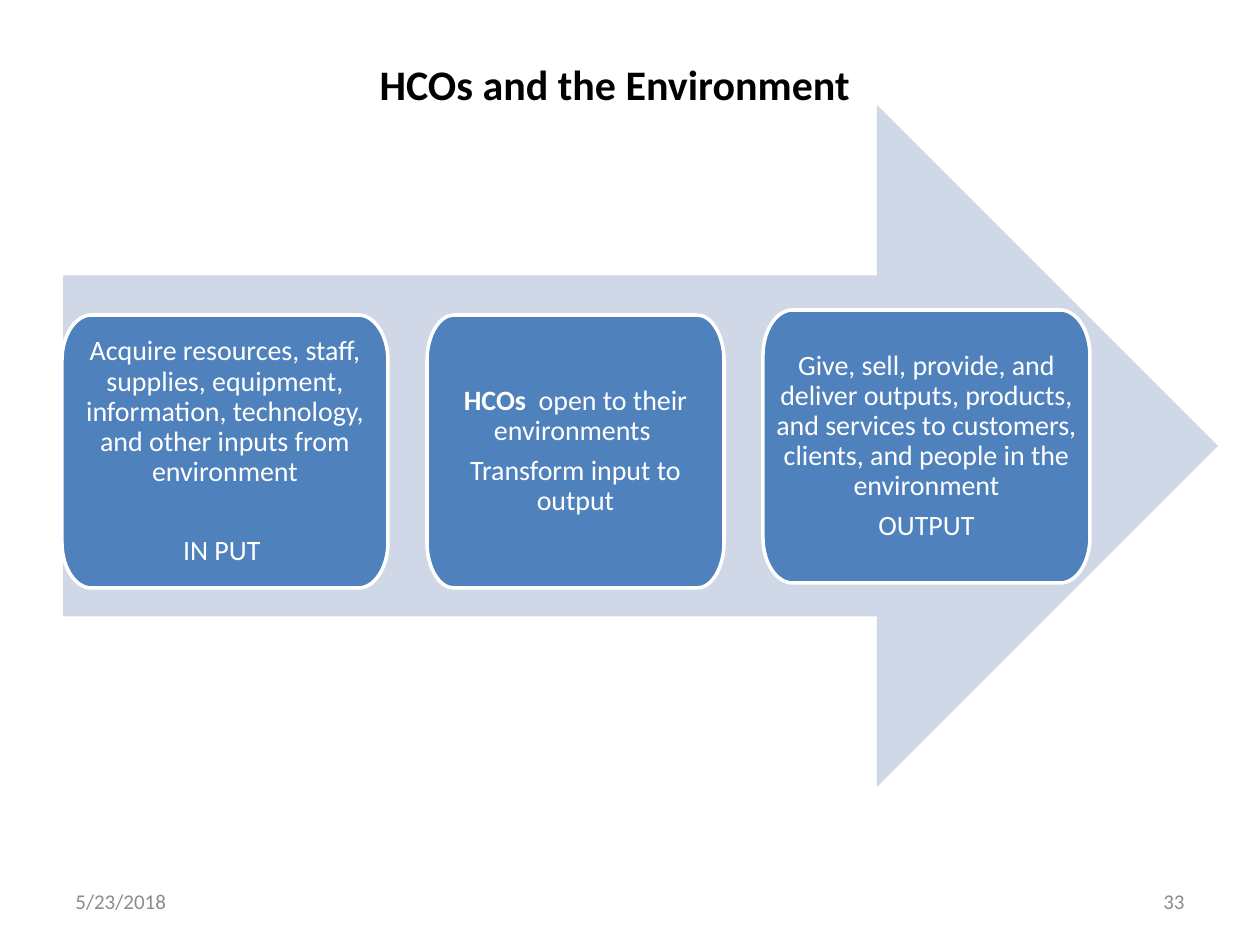
from dataclasses import dataclass

from lxml import etree
from pptx import Presentation
from pptx.dml.color import RGBColor as RGB
from pptx.enum.shapes import MSO_SHAPE as SHAPE
from pptx.enum.text import MSO_ANCHOR as ANCHOR, MSO_AUTO_SIZE as FIT, PP_ALIGN as ALIGN
from pptx.oxml.ns import qn
from pptx.util import Pt

PX = 914400 // 126


@dataclass(frozen=True)
class Theme:
    font: str = "Calibri"
    ink: RGB = RGB(0, 0, 0)
    muted: RGB = RGB(0x8C, 0x8C, 0x8C)
    arrow: RGB = RGB(0xD0, 0xD8, 0xE8)
    block: RGB = RGB(0x4F, 0x81, 0xBD)
    white: RGB = RGB(255, 255, 255)
    title_size: int = 24
    block_size: int = 16
    footer_size: int = 12


theme = Theme()


def style(r, size, color, bold=False):
    r.font.name = theme.font
    r.font.size = Pt(size)
    r.font.color.rgb = color
    r.font.bold = bold


def add_block(shapes, x, y, w, h):
    rx, ry = w / 11, h / 6
    right, bottom = x + w, y + h
    points = [
        (x, y + ry), (x, y), (x + rx, y),
        (right - rx, y), (right, y), (right, y + ry),
        (right, bottom - ry), (right, bottom), (right - rx, bottom),
        (x + rx, bottom), (x, bottom), (x, bottom - ry),
    ]
    points = [(px * PX, py * PX) for px, py in points]
    outline = shapes.build_freeform(*points[0])
    outline.add_line_segments(points[1:], close=True)
    sp = outline.convert_to_shape()
    steps = list(next(sp._element.iter(qn("a:path"))))
    for i in range(0, 12, 3):
        start, corner, end = [
            [int(step[0].get(axis)) for axis in "xy"] for step in steps[i:i + 3]
        ]
        curve = etree.Element(qn("a:cubicBezTo"))
        for near, pull in [(start, 0.55), (end, 0.55), (end, 0)]:
            px, py = [round(n + (c - n) * pull) for n, c in zip(near, corner)]
            etree.SubElement(curve, qn("a:pt"), x=str(px), y=str(py))
        steps[i + 1].getparent().replace(steps[i + 1], curve)
        steps[i + 2].getparent().remove(steps[i + 2])
    return sp


prs = Presentation()
prs.slide_width, prs.slide_height = 1260 * PX, 945 * PX
s = prs.slides.add_slide(prs.slide_layouts[5])

title = s.shapes.title
title.left, title.top, title.width, title.height = [v * PX for v in (367, 52, 510, 63)]
tf = title.text_frame
tf.text = "HCOs and the Environment"
tf.word_wrap = False
tf.auto_size = FIT.SHAPE_TO_FIT_TEXT
tf.vertical_anchor = ANCHOR.TOP
p = tf.paragraphs[0]
p.alignment = ALIGN.LEFT
style(p.runs[0], theme.title_size, theme.ink, True)

for text, x, align in [("5/23/2018", 63, ALIGN.LEFT), ("33", 903, ALIGN.RIGHT)]:
    sp = s.shapes.add_textbox(x * PX, 876 * PX, 294 * PX, 50 * PX)
    tf = sp.text_frame
    tf.text = text
    tf.word_wrap = True
    tf.vertical_anchor = ANCHOR.MIDDLE
    p = tf.paragraphs[0]
    p.alignment = align
    style(p.runs[0], theme.footer_size, theme.muted)

arrow = s.shapes.add_shape(SHAPE.RIGHT_ARROW, 63 * PX, 105 * PX, 1155 * PX, 682 * PX)
arrow.shadow.inherit = False
arrow.fill.solid()
arrow.fill.fore_color.rgb = theme.arrow
arrow.line.fill.background()

blocks = [
    (427, 315, 297, 1, 0, ["HCOs  |open to their environments ", "Transform input to output"]),
    (62, 315, 326, 0, 22, [
        "Acquire resources, staff, supplies, equipment, information, technology, "
        "and other inputs from environment",
        "IN PUT ",
    ]),
    (763, 310, 327, 0, 0, [
        "Give, sell, provide, and deliver outputs, products, and services to customers, "
        "clients, and people in the environment",
        "OUTPUT",
    ]),
]
for x, y, w, bold_runs, gap, lines in blocks:
    sp = add_block(s.shapes, x, y, w, 273)
    sp.shadow.inherit = False
    sp.fill.solid()
    sp.fill.fore_color.rgb = theme.block
    sp.line.color.rgb = theme.white
    sp.line.width = Pt(2)
    tf = sp.text_frame
    tf.word_wrap = True
    tf.vertical_anchor = ANCHOR.MIDDLE
    tf.margin_left = tf.margin_right = tf.margin_top = tf.margin_bottom = 13 * PX
    for i, line in enumerate(lines):
        p = tf.add_paragraph() if i else tf.paragraphs[0]
        p.alignment = ALIGN.CENTER
        p.line_spacing = 0.9
        p.space_before = Pt(gap if i else 0)
        p.space_after = Pt(5.6)
        for j, part in enumerate(line.split("|")):
            r = p.add_run()
            r.text = part
            style(r, theme.block_size, theme.white, i == 0 and j < bold_runs)

prs.save("out.pptx")
